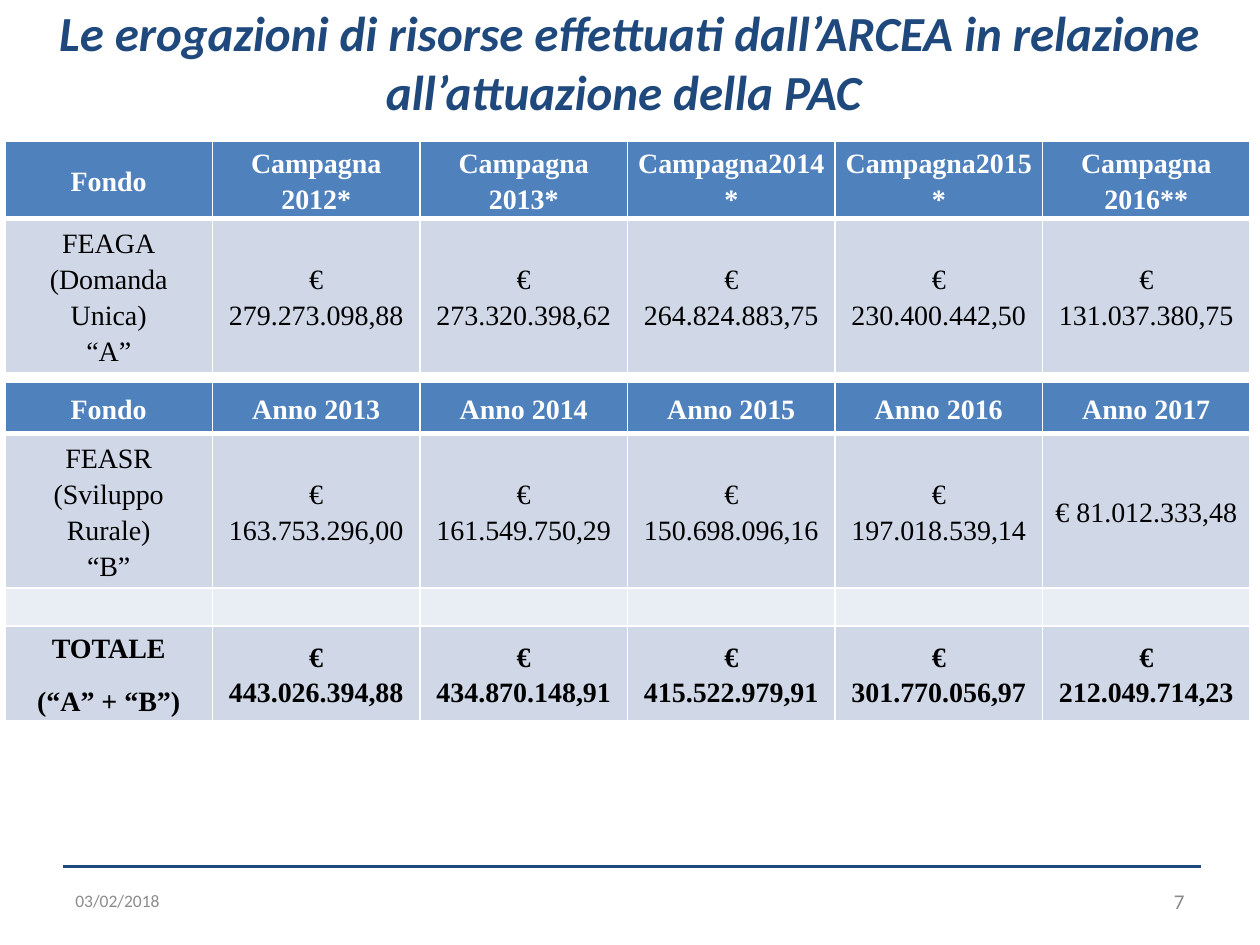
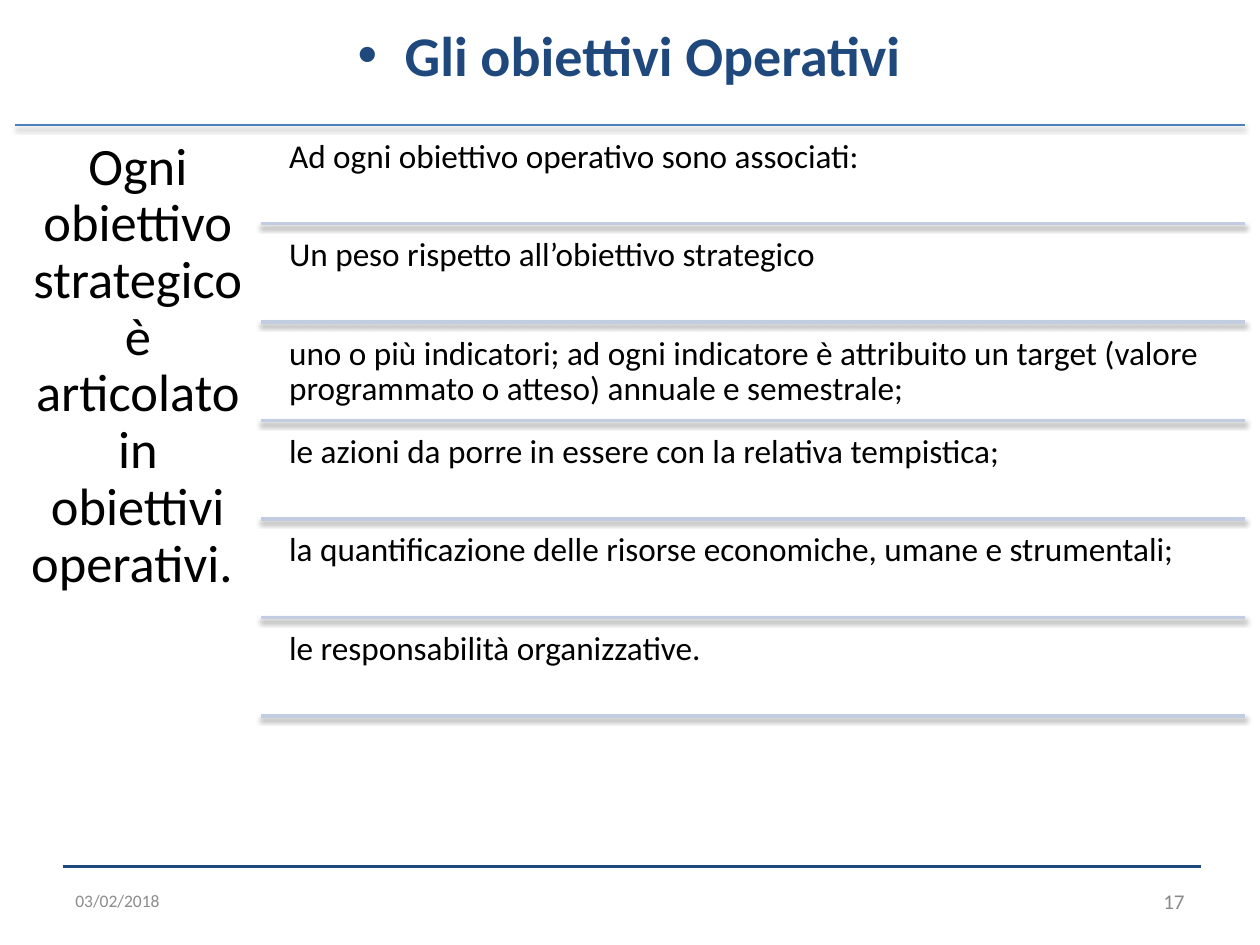
from dataclasses import dataclass

from lxml.etree import SubElement
from pptx import Presentation
from pptx.dml.color import RGBColor
from pptx.enum.shapes import MSO_CONNECTOR as Connector
from pptx.enum.text import MSO_ANCHOR as Anchor, PP_ALIGN as Align
from pptx.oxml.ns import qn
from pptx.util import Cm, Pt


@dataclass(frozen=True)
class Theme:
    """Colours, fonts and type sizes shared by the slides."""
    navy: str = "1F497D"
    blue: str = "4F81BD"
    pale_line: str = "C2CDE1"
    band: str = "D0D8E8"
    light_band: str = "E9EDF4"
    white: str = "FFFFFF"
    black: str = "000000"
    date_grey: str = "8C8C8C"
    number_grey: str = "898989"
    sans: str = "Calibri"
    serif: str = "Times New Roman"
    title: int = 28
    large_title: int = 32
    statement: int = 30
    item: int = 19
    cell: int = 16
    date: int = 10
    number: int = 12


@dataclass(frozen=True)
class Box:
    """A region of the slide, in centimetres."""
    left: float
    top: float
    width: float
    height: float


THEME = Theme()
FOOTER = Box(1.27, 17.47, 22.94, 1.4)
DATE = "03/02/2018"
CAMPAIGNS = [
    ["Fondo", "Campagna 2012*", "Campagna 2013*", "Campagna2014*", "Campagna2015*",
     "Campagna 2016**"],
    ["FEAGA\n(Domanda Unica)\n“A”", "€ 279.273.098,88", "€ 273.320.398,62",
     "€ 264.824.883,75", "€ 230.400.442,50", "€ 131.037.380,75"],
]
YEARS = [
    ["Fondo", "Anno 2013", "Anno 2014", "Anno 2015", "Anno 2016", "Anno 2017"],
    ["FEASR\n(Sviluppo Rurale)\n“B”", "€ 163.753.296,00", "€ 161.549.750,29",
     "€ 150.698.096,16", "€ 197.018.539,14", "€ 81.012.333,48"],
    [""] * 6,
    ["TOTALE\n(“A” + “B”)", "€ 443.026.394,88", "€ 434.870.148,91",
     "€ 415.522.979,91", "€ 301.770.056,97", "€ 212.049.714,23"],
]
STATEMENT = "Ogni obiettivo strategico è articolato in obiettivi operativi. "
ITEMS = [
    "Ad ogni obiettivo operativo sono associati:",
    "Un peso rispetto all’obiettivo strategico",
    "uno o più indicatori; ad ogni indicatore è attribuito un target "
    "(valore programmato o atteso) annuale e semestrale;",
    "le azioni da porre in essere con la relativa tempistica;",
    "la quantificazione delle risorse economiche, umane e strumentali;",
    "le responsabilità organizzative.",
]


def style_runs(paragraph, size, color, font=THEME.sans, bold=False, italic=False):
    """Format every run of a paragraph."""
    for run in paragraph.runs:
        run.font.name, run.font.size = font, Pt(size)
        run.font.bold, run.font.italic = bold, italic
        run.font.color.rgb = RGBColor.from_string(color)


def add_text(slide, box, text, size, color, align=Align.LEFT, anchor=Anchor.TOP,
             inset=None, spacing=None, **style):
    """Add a wrapped one-paragraph text box and return its paragraph."""
    shape = slide.shapes.add_textbox(Cm(box.left), Cm(box.top), Cm(box.width), Cm(box.height))
    frame = shape.text_frame
    frame.word_wrap, frame.vertical_anchor = True, anchor
    if inset is not None:
        frame.margin_left = frame.margin_right = Cm(inset)
        frame.margin_top = frame.margin_bottom = Cm(inset)
    frame.text = text
    paragraph = frame.paragraphs[0]
    paragraph.alignment, paragraph.line_spacing = align, spacing
    style_runs(paragraph, size, color, **style)
    return paragraph


def add_rule(slide, left, top, width, color, weight, shadow_alpha=0, shadow_distance=0):
    """Draw a horizontal line, with a soft shadow below it when an opacity is given."""
    rule = slide.shapes.add_connector(
        Connector.STRAIGHT, Cm(left), Cm(top), Cm(left + width), Cm(top))
    rule.line.color.rgb = RGBColor.from_string(color)
    rule.line.width = Pt(weight)
    effects = SubElement(rule._element.spPr, qn("a:effectLst"))
    if shadow_alpha:
        shadow = SubElement(effects, qn("a:outerShdw"), blurRad=str(Pt(3.1)),
                            dist=str(Pt(shadow_distance)), dir="5400000", rotWithShape="0")
        black = SubElement(shadow, qn("a:srgbClr"), val=THEME.black)
        SubElement(black, qn("a:alpha"), val=str(shadow_alpha * 1000))


def add_title(slide, box, text, size, bullet=False, italic=False):
    """Add the centred navy title, optionally bulleted."""
    paragraph = add_text(slide, box, text, size, THEME.navy, Align.CENTER,
                         bold=True, italic=italic)
    if bullet:
        properties = paragraph._p.get_or_add_pPr()
        properties.set("marL", str(Cm(0.95)))
        properties.set("indent", str(-Cm(0.95)))
        SubElement(properties, qn("a:buFont"), typeface="Arial")
        SubElement(properties, qn("a:buChar"), char="•")


def add_footer(slide, box, number):
    """Add the rule, date and slide number."""
    add_rule(slide, box.left, box.top, box.width, THEME.navy, 1.5)
    top, width, height = box.top + 0.18, 5.92, 1.02
    add_text(slide, Box(box.left, top, width, height), DATE,
             THEME.date, THEME.date_grey, anchor=Anchor.MIDDLE)
    add_text(slide, Box(box.left + 16.94, top, width, height), str(number),
             THEME.number, THEME.number_grey, Align.RIGHT, Anchor.MIDDLE)


def style_cell(cell, text, fill, color, bold, bottom_weight, space_after):
    """Fill one table cell with its text, white borders and background."""
    cell.margin_left = cell.margin_right = Cm(0.18)
    cell.margin_top = cell.margin_bottom = 0
    cell.vertical_anchor = Anchor.MIDDLE
    cell.text_frame.text = text
    for paragraph in cell.text_frame.paragraphs:
        paragraph.alignment = Align.CENTER
        paragraph.line_spacing = 1.15 if text else 0.9
        paragraph.space_after = Pt(space_after)
        style_runs(paragraph, THEME.cell, color, THEME.serif, bold)
    properties = cell._tc.get_or_add_tcPr()
    for side, weight in zip("LRTB", (1, 1, 1, bottom_weight)):
        border = SubElement(properties, qn(f"a:ln{side}"), w=str(Pt(weight)))
        solid = SubElement(border, qn("a:solidFill"))
        SubElement(solid, qn("a:srgbClr"), val=THEME.white)
    cell.fill.solid()
    cell.fill.fore_color.rgb = RGBColor.from_string(fill)


def add_fund_table(slide, box, rows, heights):
    """Add a table with a blue header, banded rows and a bold total, if any."""
    table = slide.shapes.add_table(len(rows), len(rows[0]), Cm(box.left), Cm(box.top),
                                   Cm(box.width), Cm(box.height)).table
    table.horz_banding = False
    for column in table.columns:
        column.width = Cm(box.width / len(rows[0]))
    for i, (values, height) in enumerate(zip(rows, heights)):
        table.rows[i].height = Cm(height)
        header, total = i == 0, values[0].startswith("TOTALE")
        fill = THEME.blue if header else THEME.band if values[0] else THEME.light_band
        color = THEME.white if header else THEME.black
        for j, text in enumerate(values):
            plain = not text or (j == 0 and not total) or (header and rows is CAMPAIGNS)
            style_cell(table.cell(i, j), text, fill, color, header or total,
                       3 if header else 1, 0 if plain else 10)


def add_objectives(slide, box):
    """Place the statement on the left and the ruled items on the right."""
    gap, indent = 0.09, 0.37
    step = (box.height - gap) / len(ITEMS)
    column = box.width / 5
    add_rule(slide, box.left, box.top, box.width, THEME.blue, 0.75, 35, 1.8)
    add_text(slide, Box(box.left, box.top, column, box.height), STATEMENT,
             THEME.statement, THEME.black, Align.CENTER, inset=0.3, spacing=0.9)
    left, width = box.left + column, box.width - column
    for i, item in enumerate(ITEMS):
        top = box.top + i * step
        add_text(slide, Box(left + indent, top + gap, width - indent, step - gap), item,
                 THEME.item, THEME.black, inset=0.2, spacing=0.9)
        add_rule(slide, left, top + step, width, THEME.pale_line, 2, 38, 1.6)


def build_payments_slide(slide):
    """Build the slide with the two tables of payments."""
    add_title(slide, Box(0.25, -0.08, 24.87, 2.06),
              "Le erogazioni di risorse effettuati dall’ARCEA in relazione "
              "all’attuazione della PAC ", THEME.title, italic=True)
    add_fund_table(slide, Box(0.1, 2.85, 25.1, 4.3), CAMPAIGNS, [1.44, 2.86])
    add_fund_table(slide, Box(0.1, 7.7, 25.1, 6.4), YEARS, [1.04, 2.86, 0.72, 1.78])
    add_footer(slide, FOOTER, 7)


def build_objectives_slide(slide):
    """Build the slide on operational objectives."""
    add_objectives(slide, Box(0.3, 2.52, 24.8, 12))
    add_title(slide, Box(0.25, 0.28, 24.87, 2.06), "Gli obiettivi Operativi",
              THEME.large_title, bullet=True)
    add_footer(slide, FOOTER, 17)


def main():
    """Build and save the presentation."""
    presentation = Presentation()
    presentation.slide_width, presentation.slide_height = Cm(25.4), Cm(19.05)
    for build in (build_payments_slide, build_objectives_slide):
        build(presentation.slides.add_slide(presentation.slide_layouts[6]))
    presentation.save("out.pptx")


if __name__ == "__main__":
    main()
